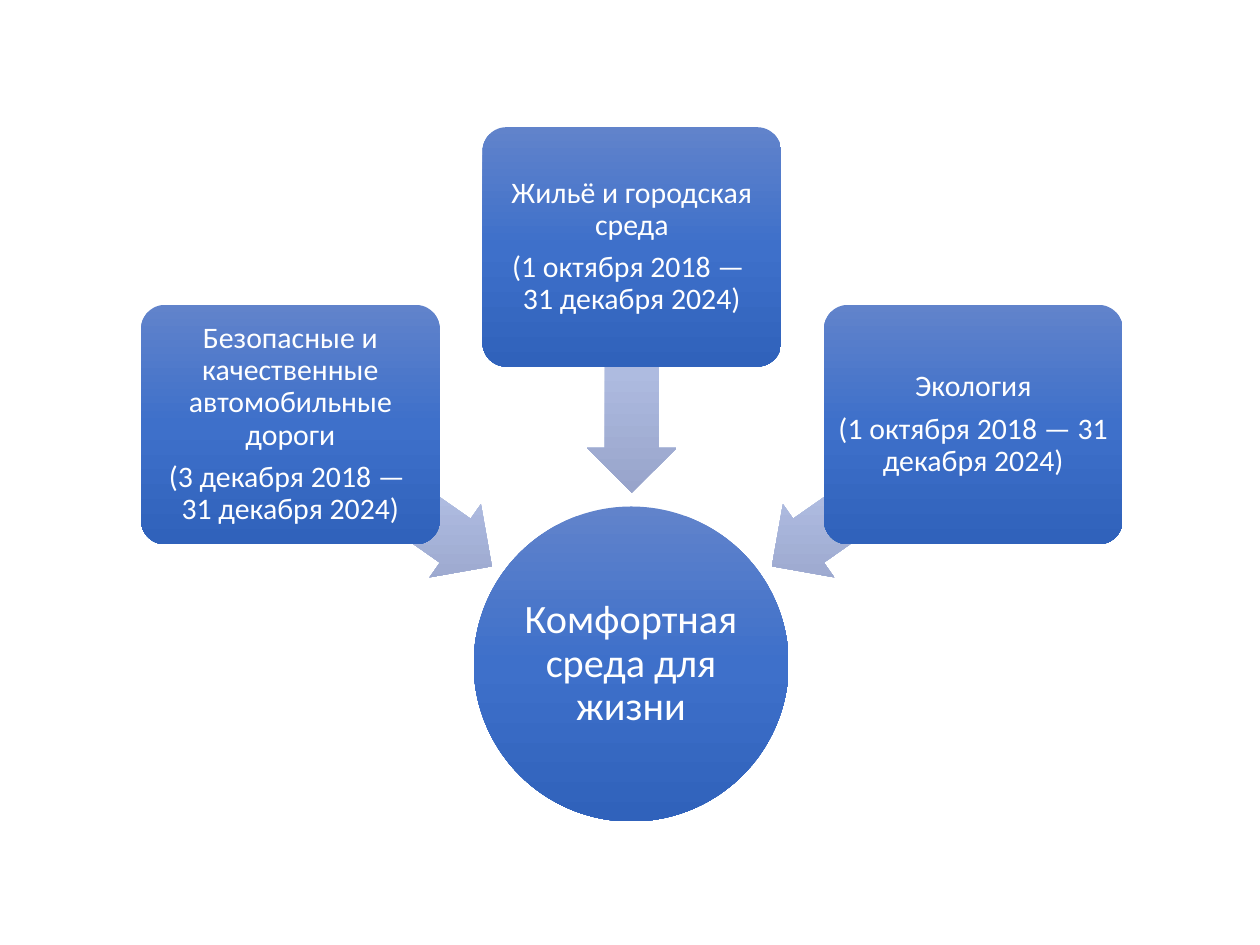
from pptx import Presentation
from pptx import util as u
from pptx.dml import color
from pptx.enum import shapes, text
from copy import deepcopy

FORM = shapes.MSO_SHAPE
DARK = ("6183CB", "3E70CA", "3062BB")
PALE = ("BBC5E3", "AEBBE0", "98A4CB")


def tint(code):
    return color.RGBColor.from_string(code)


class Board:
    font = "Calibri"
    ink = "FFFFFF"

    def __init__(self, slide):
        self.slide = slide

    def shape(self, form, left, top, width, height, shades):
        item = self.slide.shapes.add_shape(
            form, u.Inches(left), u.Inches(top), u.Inches(width), u.Inches(height))
        item.shadow.inherit = False
        item.line.fill.background()
        self.blend(item, shades)
        return item

    def blend(self, item, shades):
        fill = item.fill
        fill.gradient()
        fill.gradient_angle = 270
        grad = item._element.spPr.find(".//{*}gradFill")
        grad.set("rotWithShape", "0")
        stops = grad.find("{*}gsLst")
        stops.insert(1, deepcopy(stops[0]))
        for stop, spot, shade in zip(fill.gradient_stops, (0, 0.5, 1), shades):
            stop.position = spot
            stop.color.rgb = tint(shade)

    def label(self, item, paras, size, inset):
        frame = item.text_frame
        frame.word_wrap = True
        frame.vertical_anchor = text.MSO_ANCHOR.MIDDLE
        frame.margin_left = frame.margin_right = u.Inches(inset)
        frame.margin_top = frame.margin_bottom = u.Inches(inset)
        for i, lines in enumerate(paras):
            para = frame.add_paragraph() if i else frame.paragraphs[0]
            para.alignment = text.PP_ALIGN.CENTER
            para.line_spacing = 0.9
            if i:
                para.space_before = u.Pt(0.35 * size)
            for j, line in enumerate(lines):
                if j:
                    para.add_line_break()
                run = para.add_run()
                run.text = line
                run.font.name = self.font
                run.font.size = u.Pt(size)
                run.font.color.rgb = tint(self.ink)

    def arrow(self, left, top, turn):
        item = self.shape(FORM.LEFT_ARROW, left, top, 1.95, 0.71, PALE)
        item.adjustments[0] = 0.6
        item.adjustments[1] = 0.5
        item.rotation = turn

    def card(self, left, top, paras):
        item = self.shape(FORM.ROUNDED_RECTANGLE, left, top, 2.37, 1.9, DARK)
        item.adjustments[0] = 0.1
        self.label(item, paras, 17, 0.04)

    def hub(self, left, top, size, words):
        item = self.shape(FORM.OVAL, left, top, size, size, DARK)
        self.label(item, [[words]], 23, 0.02)


def main():
    deck = Presentation()
    deck.slide_width = u.Inches(10)
    deck.slide_height = u.Inches(7.5)
    board = Board(deck.slides.add_slide(deck.slide_layouts[6]))
    board.hub(3.76, 4.02, 2.5, "Комфортная среда для жизни")
    goals = [
        (2.42, 3.58, "Безопасные и качественные автомобильные дороги",
         ["(3 декабря 2018 — ", "31 декабря 2024)"]),
        (1.01, 2.58, "Жильё и городская среда",
         ["(1 октября 2018 — ", "31 декабря 2024)"]),
        (2.42, 3.58, "Экология", ["(1 октября 2018 — 31 декабря 2024)"]),
    ]
    for i, (top, tip, name, dates) in enumerate(goals):
        board.arrow(2.13 + 1.91 * i, tip, 215 + 55 * i)
        board.card(1.12 + 2.71 * i, top, [[name], dates])
    deck.save("out.pptx")


if __name__ == "__main__":
    main()
